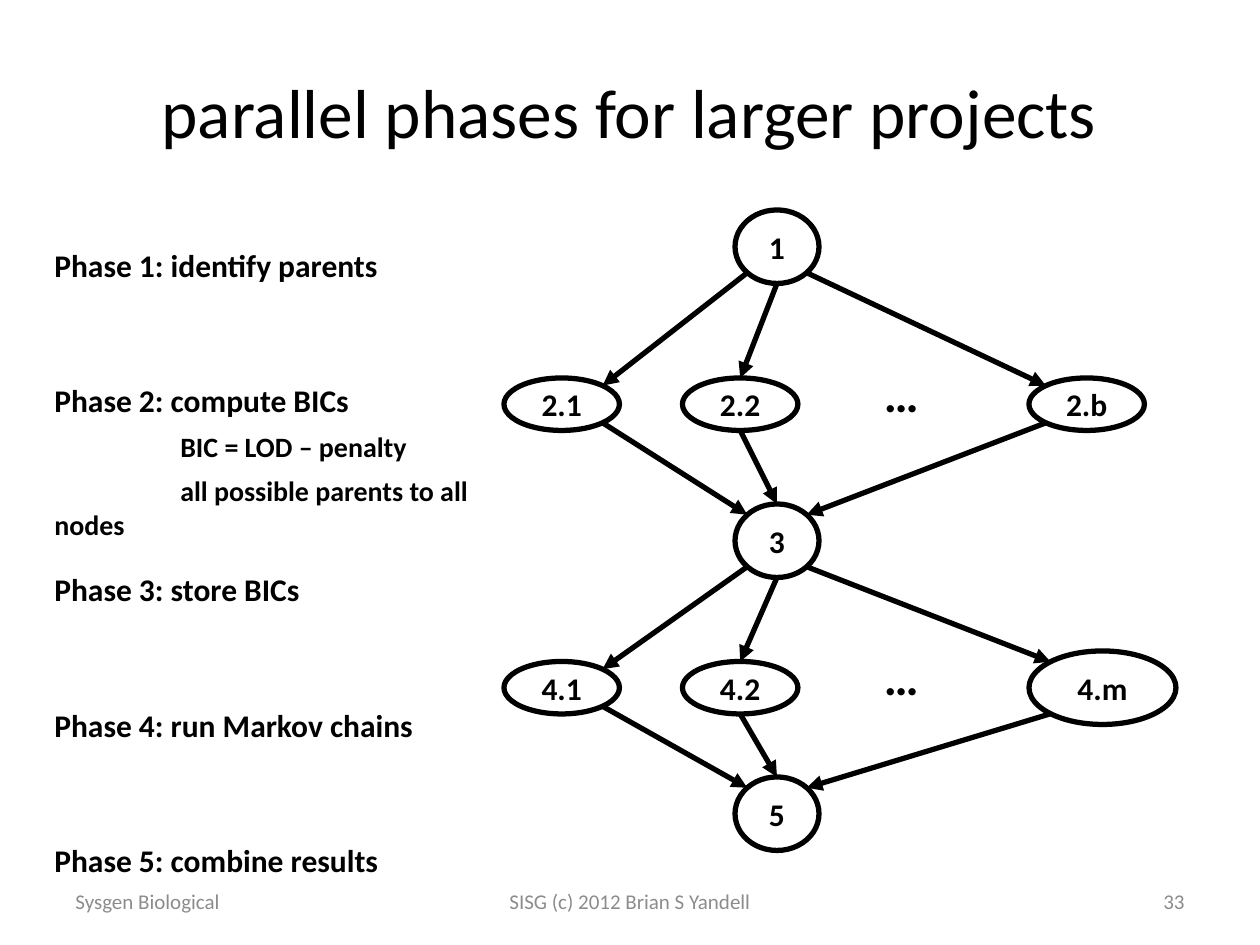
import math
from dataclasses import dataclass

import pptx
import pptx.dml.color
import pptx.enum.shapes
import pptx.enum.text
import pptx.oxml.ns
import pptx.util
from lxml import etree

Pt = pptx.util.Pt
Align = pptx.enum.text.PP_ALIGN
Anchor = pptx.enum.text.MSO_ANCHOR


@dataclass(frozen=True)
class Theme:
    font: str = "Calibri"
    ink: str = "000000"
    paper: str = "FFFFFF"
    muted: str = "8C8C8C"
    title: float = 39.6
    dots: float = 28
    body: float = 18
    detail: float = 16
    footer: float = 12
    stroke: float = 3


theme = Theme()


def color(value):
    return pptx.dml.color.RGBColor.from_string(value)


def style(para, text, size, bold=False, ink=theme.ink, align=Align.LEFT):
    para.text = text
    para.alignment = align
    para.font.name = theme.font
    para.font.size = Pt(size)
    para.font.bold = bold
    para.font.color.rgb = color(ink)


deck = pptx.Presentation()
deck.slide_width, deck.slide_height = Pt(720), Pt(540)
page = deck.slides.add_slide(deck.slide_layouts[6])

captions = [
    ("parallel phases for larger projects", 54, 36, 611, 54, theme.title, theme.ink, Align.CENTER),
    ("Sysgen Biological", 36, 500.5, 168, 28.75, theme.footer, theme.muted, Align.LEFT),
    ("SISG (c) 2012 Brian S Yandell", 246, 500.5, 228, 28.75, theme.footer, theme.muted, Align.CENTER),
    ("33", 516, 500.5, 168, 28.75, theme.footer, theme.muted, Align.RIGHT),
]
for text, left, top, width, height, size, ink, align in captions:
    box = page.shapes.add_textbox(Pt(left), Pt(top), Pt(width), Pt(height))
    box.text_frame.word_wrap = True
    box.text_frame.vertical_anchor = Anchor.MIDDLE
    style(box.text_frame.paragraphs[0], text, size, ink=ink, align=align)

nodes = {
    "1": (420, 120, 48, 42),
    "2.1": (288, 216, 66, 30),
    "2.2": (390, 216, 66, 30),
    "2.b": (588, 216, 66, 30),
    "3": (420, 288, 48, 42),
    "4.1": (288, 378, 66, 30),
    "4.2": (390, 378, 66, 30),
    "4.m": (588, 372, 84, 42),
    "5": (420, 444, 48, 42),
}
ellipses = {}
for label, bounds in nodes.items():
    ellipse = page.shapes.add_shape(pptx.enum.shapes.MSO_SHAPE.OVAL, *map(Pt, bounds))
    ellipse.shadow.inherit = False
    ellipse.fill.solid()
    ellipse.fill.fore_color.rgb = color(theme.paper)
    ellipse.line.color.rgb = color(theme.ink)
    ellipse.line.width = Pt(theme.stroke)
    ellipse.text_frame.word_wrap = False
    ellipse.text_frame.vertical_anchor = Anchor.MIDDLE
    style(ellipse.text_frame.paragraphs[0], label, theme.body, bold=True, align=Align.CENTER)
    ellipses[label] = ellipse

for top in (204, 366):
    box = page.shapes.add_textbox(Pt(498), Pt(top), Pt(43), Pt(41))
    box.text_frame.word_wrap = False
    style(box.text_frame.paragraphs[0], "…", theme.dots, bold=True)

diagonal = math.sqrt(0.5)
stages = [("1", ("2.1", "2.2", "2.b"), "3"), ("3", ("4.1", "4.2", "4.m"), "5")]
for source, branches, target in stages:
    for branch, side in zip(branches, (-1, 0, 1)):
        for start, end, start_side, end_side in (
            (source, branch, side, -side),
            (branch, target, -side, side),
        ):
            points = []
            for label, across, down in ((start, start_side, 1), (end, end_side, -1)):
                left, top, width, height = nodes[label]
                reach = diagonal if across else 1
                points.append(Pt(left + width / 2 * (1 + across * diagonal)))
                points.append(Pt(top + height / 2 * (1 + down * reach)))
            arrow = page.shapes.add_connector(pptx.enum.shapes.MSO_CONNECTOR.STRAIGHT, *points)
            if side == 0:
                arrow.end_connect(ellipses[end], 0)
            arrow.line.color.rgb = color(theme.ink)
            arrow.line.width = Pt(theme.stroke)
            outline = arrow.line._get_or_add_ln()
            etree.SubElement(outline, pptx.oxml.ns.qn("a:tailEnd"), type="triangle")
            etree.SubElement(arrow._element.spPr, pptx.oxml.ns.qn("a:effectLst"))

phases = [
    ("Phase 1: identify parents", theme.body, 1.5, 6, 0),
    ("Phase 2: compute BICs", theme.body, 1.5, 45, 0),
    ("BIC = LOD – penalty", theme.detail, 1, 6, 72),
    ("all possible parents to all nodes", theme.detail, 1, 6, 72),
    ("Phase 3: store BICs", theme.body, 1.5, 6, 0),
    ("Phase 4: run Markov chains", theme.body, 1.5, 45, 0),
    ("Phase 5: combine results", theme.body, 1.5, 45, 0),
]
box = page.shapes.add_textbox(Pt(24), Pt(126), Pt(288), Pt(365))
frame = box.text_frame
frame.word_wrap = True
for index, (text, size, spacing, before, indent) in enumerate(phases):
    para = frame.add_paragraph() if index else frame.paragraphs[0]
    style(para, text, size, bold=True)
    para.line_spacing = spacing
    para.space_before = Pt(before)
    para._p.get_or_add_pPr().set("indent", str(Pt(indent)))

deck.save("out.pptx")
